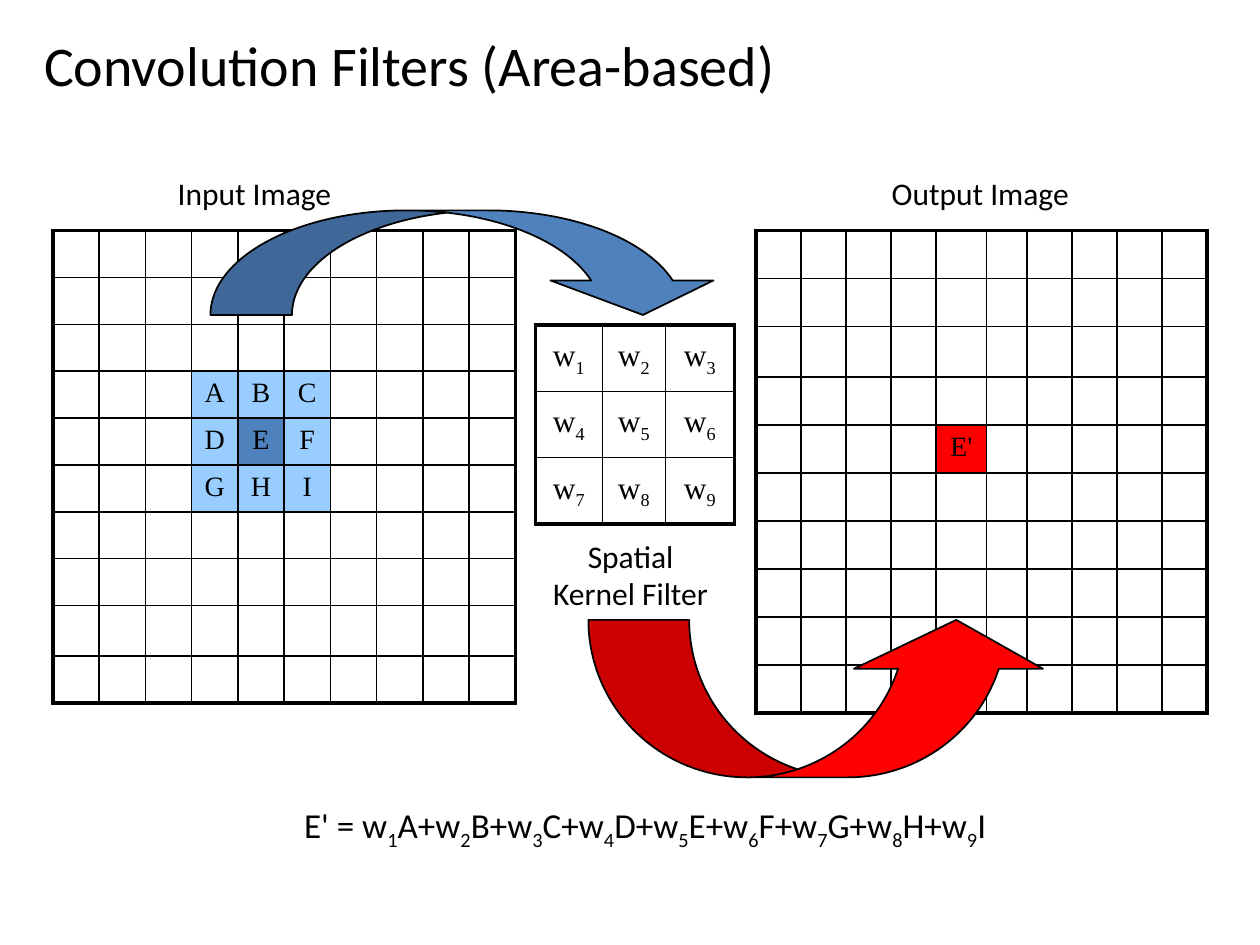
"""Build a slide that explains area-based convolution filters."""
from lxml import etree
from pptx import Presentation
from pptx import util as u
from pptx.dml.color import RGBColor
from pptx.enum import shapes, text
from pptx.oxml import ns

BLACK = RGBColor(0x00, 0x00, 0x00)
LIGHT_BLUE = RGBColor(0x99, 0xCC, 0xFF)
BLUE = RGBColor(0x4F, 0x81, 0xBD)
RED = RGBColor(0xFF, 0x00, 0x00)
SANS, SERIF = "Calibri", "Times New Roman"


def spread(total, count, odd):
    """Share a length equally among the parts that have no size of their own."""
    share = (total - sum(odd.values())) / (count - len(odd))
    return [odd.get(i, share) for i in range(count)]


def add_xml(parent, tag, **attributes):
    """Append a DrawingML element."""
    return etree.SubElement(parent, ns.qn(f"a:{tag}"), attributes)


class ConvolutionSlide:
    """Holds the style and the current slide."""

    outer_line, inner_line = u.Pt(2.25), u.Pt(1)

    def __init__(self, deck):
        self.slide = deck.slides.add_slide(deck.slide_layouts[5])

    def set_text(self, frame, content, size, font=SANS, align=text.PP_ALIGN.CENTER, **frame_format):
        """Fill in one paragraph; the digit after each underscore is a subscript."""
        for name, value in frame_format.items():
            setattr(frame, name, value)
        paragraph = frame.paragraphs[0]
        paragraph.alignment = align
        first, *rest = content.split("_")
        pieces = [(first, False)]
        for part in rest:
            pieces += [(part[0], True), (part[1:], False)]
        for words, lowered in pieces:
            if not words:
                continue
            run = paragraph.add_run()
            run.text = words
            for name, value in {"size": u.Pt(size), "name": font}.items():
                setattr(run.font, name, value)
            run.font.color.rgb = BLACK
            if lowered:
                run._r.get_or_add_rPr().set("baseline", "-25000")
        return paragraph

    def title(self, content, box):
        heading = self.slide.shapes.title
        for name, value in zip(("left", "top", "width", "height"), box):
            setattr(heading, name, u.Inches(value))
        self.set_text(heading.text_frame, content, 32, align=text.PP_ALIGN.LEFT,
                      vertical_anchor=text.MSO_ANCHOR.MIDDLE)

    def label(self, content, box, size=18, wrap=False):
        frame = self.slide.shapes.add_textbox(*map(u.Inches, box)).text_frame
        self.set_text(frame, content, size, word_wrap=wrap,
                      auto_size=text.MSO_AUTO_SIZE.SHAPE_TO_FIT_TEXT)

    def grid(self, corner, widths, heights, letters, fills, size=16, anchor=text.MSO_ANCHOR.TOP):
        """Add a pixel grid with a heavy frame; letters and fills are keyed by row and column."""
        box = (*corner, sum(widths), sum(heights))
        table = self.slide.shapes.add_table(len(heights), len(widths), *map(u.Inches, box)).table
        table.first_row = table.horz_banding = False
        for column, width in zip(table.columns, widths):
            column.width = u.Inches(width)
        for row, height in zip(table.rows, heights):
            row.height = u.Inches(height)
        for r in range(len(heights)):
            for c in range(len(widths)):
                cell = table.cell(r, c)
                cell.vertical_anchor = anchor
                self.borders(cell, {"lnL": c == 0, "lnR": c == len(widths) - 1,
                                    "lnT": r == 0, "lnB": r == len(heights) - 1})
                if (r, c) in fills:
                    cell.fill.solid()
                    cell.fill.fore_color.rgb = fills[r, c]
                else:
                    cell.fill.background()
                if (r, c) in letters:
                    paragraph = self.set_text(cell.text_frame, letters[r, c], size, SERIF)
                    before = add_xml(paragraph._p.get_or_add_pPr(), "spcBef")
                    add_xml(before, "spcPct", val="20000")
                else:
                    add_xml(cell.text_frame.paragraphs[0]._p, "endParaRPr", sz="1200")

    def borders(self, cell, sides):
        properties = cell._tc.get_or_add_tcPr()
        for tag, is_outer in sides.items():
            width = self.outer_line if is_outer else self.inner_line
            fill = add_xml(add_xml(properties, tag, w=str(int(width))), "solidFill")
            add_xml(fill, "srgbClr", val=str(BLACK))

    def arrow(self, box, adjustments, color, flipped=False):
        arrow = self.slide.shapes.add_shape(
            shapes.MSO_SHAPE.CURVED_DOWN_ARROW, *map(u.Inches, box))
        for i, value in enumerate(adjustments):
            arrow.adjustments[i] = value
        arrow.shadow.inherit = False
        arrow.fill.solid()
        arrow.fill.fore_color.rgb = color
        arrow.line.color.rgb = BLACK
        arrow.line.width = self.inner_line
        if flipped:
            arrow._element.spPr.xfrm.set("flipV", "1")


def block(entries, start=0):
    """Key nine entries by row and column of a 3 by 3 block."""
    return {(start + i // 3, start + i % 3): entry for i, entry in enumerate(entries)}


def main():
    deck = Presentation()
    deck.slide_width, deck.slide_height = u.Inches(10), u.Inches(7.5)
    page = ConvolutionSlide(deck)
    page.title("Convolution Filters (Area-based)", (0.25, 0.17, 9, 0.67))

    neighbours = block("ABCDEFGHI", 3)
    weights = block([f"w_{i}" for i in range(1, 10)])
    shades = {**dict.fromkeys(neighbours, LIGHT_BLUE), (4, 4): BLUE}
    page.grid((0.42, 1.83), spread(3.67, 10, {}), spread(3.75, 10, {8: 0.4}), neighbours, shades)
    page.grid((4.25, 2.58), [0.53, 0.5, 0.55], spread(1.58, 3, {}), weights, {},
              size=18, anchor=text.MSO_ANCHOR.MIDDLE)
    page.grid((6, 1.83), spread(3.58, 10, {4: 0.4, 5: 0.32}), spread(3.83, 10, {2: 0.4}),
              {(4, 4): "E'"}, {(4, 4): RED})

    page.arrow((1.67, 1.67, 4.08, 0.83), (0.78, 1.56, 0.33), BLUE)
    page.arrow((4.67, 4.92, 3.67, 1.25), (0.64, 1.2, 0.31), RED, flipped=True)

    terms = "+".join(f"w_{i}{letter}" for i, letter in enumerate("ABCDEFGHI", 1))
    page.label(f"E' = {terms}", (2.24, 6.33, 5.76, 0.44), size=20)
    page.label("Input Image", (1.3, 1.33, 1.44, 0.4))
    page.label("Output Image", (6.97, 1.33, 1.62, 0.4))
    page.label("Spatial Kernel Filter", (4.25, 4.21, 1.51, 0.71), wrap=True)
    deck.save("out.pptx")


if __name__ == "__main__":
    main()
